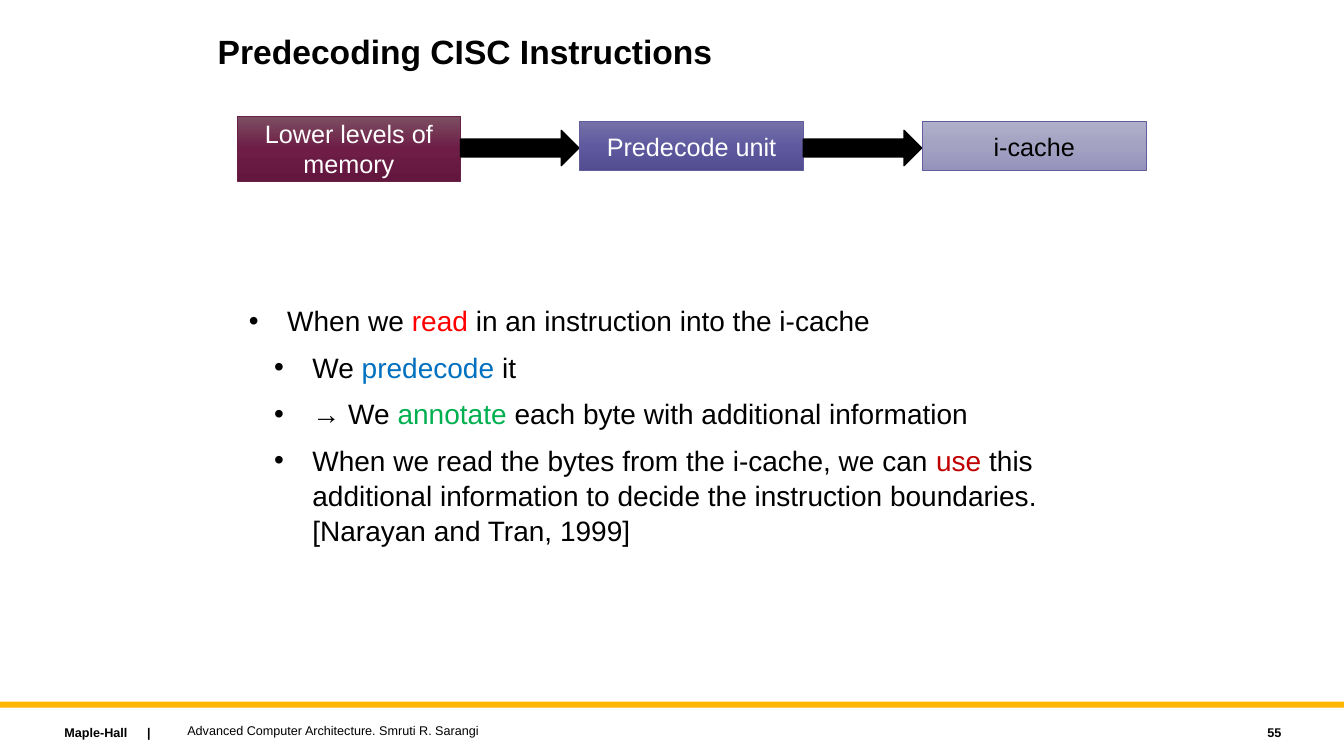
from copy import deepcopy

from lxml.etree import SubElement
from pptx import Presentation
from pptx.dml.color import RGBColor
from pptx.enum.shapes import MSO_SHAPE
from pptx.enum.text import MSO_ANCHOR, MSO_AUTO_SIZE, PP_ALIGN
from pptx.oxml.ns import qn
from pptx.util import Inches, Pt

WIDE, HIGH = Inches(13.333), Inches(7.5)
COL, ROW = WIDE / 100, HIGH / 100
STEP = 25.5

BLACK = RGBColor(0, 0, 0)
WHITE = RGBColor(255, 255, 255)
GOLD = RGBColor(0xFF, 0xB6, 0x00)
RED = RGBColor(0xFF, 0x00, 0x00)
BLUE = RGBColor(0x00, 0x70, 0xC0)
GREEN = RGBColor(0x00, 0xB0, 0x50)
DARK = RGBColor(0xC0, 0x00, 0x00)
WINE = RGBColor(0x69, 0x21, 0x46)
PLUM = RGBColor(0x62, 0x5D, 0x9C)
WINES = [RGBColor(0x7C, 0x4F, 0x62), RGBColor(0x6D, 0x1D, 0x46), RGBColor(0x64, 0x17, 0x3E)]
PLUMS = [RGBColor(0x75, 0x71, 0xA8), RGBColor(0x5F, 0x5A, 0x9F), RGBColor(0x52, 0x4D, 0x90)]
PALES = [RGBColor(0xB0, 0xAF, 0xCA), RGBColor(0xA4, 0xA2, 0xC2), RGBColor(0x94, 0x92, 0xBB)]

STAGES = [
    ("Lower levels of memory", 15.35, 8.6, WINES, WINE, WHITE),
    ("Predecode unit", 16.05, 6.53, PLUMS, PLUM, WHITE),
    ("i-cache", 16.05, 6.53, PALES, PLUM, BLACK),
]
POINTS = [
    (0, "When we ", "read", RED, " in an instruction into the i-cache"),
    (1, "We ", "predecode", BLUE, " it"),
    (1, "→ We ", "annotate", GREEN, " each byte with additional information"),
    (1, "When we read the bytes from the i-cache, we can ", "use", DARK,
     " this additional information to decide the instruction boundaries."
     "\n[Narayan and Tran, 1999]"),
]


def area(x, y, w, h):
    return [round(v) for v in (x * COL, y * ROW, w * COL, h * ROW)]


def write(para, text, size=20, color=BLACK, bold=False, align=PP_ALIGN.LEFT):
    para.alignment = align
    for row, line in enumerate(text.split("\n")):
        if row:
            para.add_line_break()
        run = para.add_run()
        run.text = line
        font = run.font
        font.name, font.size, font.bold = "Arial", Pt(size), bold
        font.color.rgb = color


def label(slide, box, text="", anchor=MSO_ANCHOR.MIDDLE, **style):
    frame = slide.shapes.add_textbox(*area(*box)).text_frame
    frame.word_wrap = True
    frame.vertical_anchor = anchor
    if text:
        write(frame.paragraphs[0], text, **style)
    return frame


def block(slide, kind, box, fill, line=None, width=1):
    shape = slide.shapes.add_shape(kind, *area(*box))
    shape.shadow.inherit = False
    if isinstance(fill, list):
        blend(shape, fill)
    else:
        shape.fill.solid()
        shape.fill.fore_color.rgb = fill
    if line is None:
        shape.line.fill.background()
    else:
        shape.line.color.rgb = line
        shape.line.width = Pt(width)
    return shape


def blend(shape, shades):
    shape.fill.gradient()
    shape.fill.gradient_angle = 270
    stops = shape.element.spPr.find(qn("a:gradFill")).find(qn("a:gsLst"))
    stops.append(deepcopy(stops[0]))
    for spot, (stop, shade) in enumerate(zip(shape.fill.gradient_stops, shades)):
        stop.color.rgb = shade
        stop.position = spot / 2


def head(slide, text):
    title = slide.shapes.title
    title.left, title.top, title.width, title.height = area(15.45, 4, 58.6, 12)
    frame = title.text_frame
    frame.auto_size = MSO_AUTO_SIZE.NONE
    frame.vertical_anchor = MSO_ANCHOR.TOP
    para = frame.paragraphs[0]
    para.line_spacing = 0.9
    write(para, text, size=24, bold=True)


def flow(slide):
    for place, (text, top, high, fill, line, ink) in enumerate(STAGES):
        left = 17.63 + place * STEP
        box = block(slide, MSO_SHAPE.RECTANGLE, (left, top, 16.65, high), fill, line, 0.5)
        frame = box.text_frame
        frame.word_wrap = True
        frame.vertical_anchor = MSO_ANCHOR.MIDDLE
        write(frame.paragraphs[0], text, size=18, color=ink, align=PP_ALIGN.CENTER)
        if place < len(STAGES) - 1:
            block(slide, MSO_SHAPE.RIGHT_ARROW, (left + 16.65, 17.25, 8.8, 4.67),
                  BLACK, BLACK)


def bullets(slide):
    frame = label(slide, (17.78, 39.33, 67.35, 31.2), anchor=MSO_ANCHOR.TOP)
    for place, (level, lead, word, color, rest) in enumerate(POINTS):
        para = frame.add_paragraph() if place else frame.paragraphs[0]
        para.level = level
        para.line_spacing = 1.05
        para.space_before = Pt(8 if place else 0)
        props = para._p.get_or_add_pPr()
        props.set("marL", str(Inches(0.38 + 0.25 * level)))
        props.set("indent", str(Inches(-0.38)))
        SubElement(props, qn("a:buFont"), typeface="Arial")
        SubElement(props, qn("a:buChar"), char="•")
        write(para, lead)
        write(para, word, color=color)
        write(para, rest)


def foot(slide):
    block(slide, MSO_SHAPE.RECTANGLE, (0, 92.8, 100, 0.8), GOLD)
    brand = label(slide, (4.05, 95.2, 17, 3.33))
    para = brand.paragraphs[0]
    tabs = SubElement(para._p.get_or_add_pPr(), qn("a:tabLst"))
    SubElement(tabs, qn("a:tab"), pos=str(Inches(0.82)), algn="l")
    write(para, "Maple-Hall\t|", size=9, bold=True)
    label(slide, (13.2, 94.93, 60, 3.33),
          "Advanced Computer Architecture. Smruti R. Sarangi", size=9)
    label(slide, (85.58, 95.2, 10.5, 3.33), "55", size=9, bold=True, align=PP_ALIGN.RIGHT)


def main():
    deck = Presentation()
    deck.slide_width, deck.slide_height = WIDE, HIGH
    slide = deck.slides.add_slide(deck.slide_layouts[5])
    head(slide, "Predecoding CISC Instructions")
    bullets(slide)
    foot(slide)
    flow(slide)
    deck.save("out.pptx")


if __name__ == "__main__":
    main()
